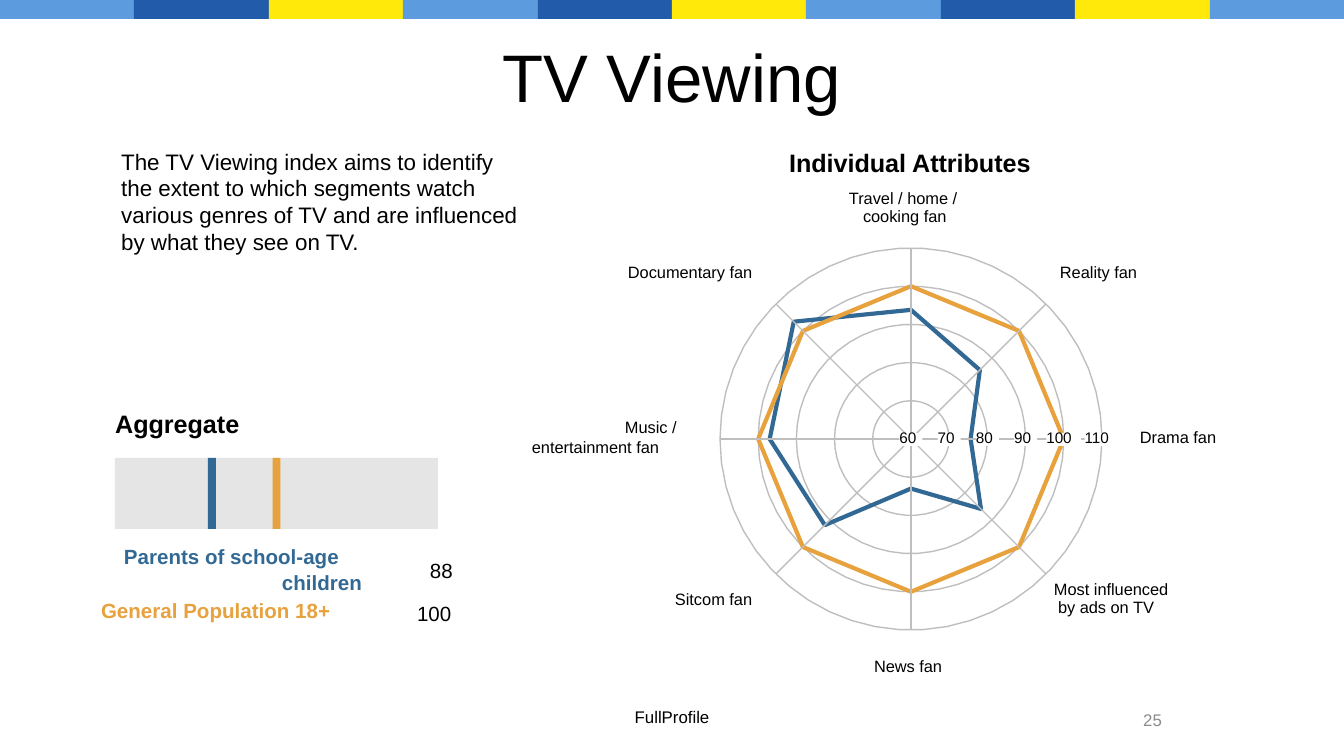
from dataclasses import dataclass
from math import cos, radians, sin

from lxml.etree import SubElement
from pptx import Presentation
from pptx.dml.color import RGBColor
from pptx.enum.shapes import MSO_CONNECTOR, MSO_SHAPE
from pptx.enum.text import MSO_ANCHOR, PP_ALIGN
from pptx.oxml.ns import qn
from pptx.util import Emu, Pt


@dataclass(frozen=True)
class Theme:
    font: str = "Arial"
    ink: str = "000000"
    paper: str = "FFFFFF"
    muted: str = "8C8C8C"
    grid: str = "BEBEBE"
    track: str = "E5E5E5"
    parents: str = "326994"
    population: str = "E7A13D"
    stripes: tuple = ("5B9BDE", "235BAB", "FFE90A")
    title: float = 36
    heading: float = 13.5
    body: float = 12
    legend: float = 11
    small: float = 9
    label: float = 8.8
    tick: float = 8.2
    grid_line: float = 0.75
    series_line: float = 2.25


THEME = Theme()
WIDTH, HEIGHT = 1344, 756
EMU_PER_PX = 914400 / 134.4

# Content: text, box (left, top, width, height), size, bold, colour, alignment, anchor
LEFT, CENTER, RIGHT = PP_ALIGN.LEFT, PP_ALIGN.CENTER, PP_ALIGN.RIGHT
TOP, MIDDLE = MSO_ANCHOR.TOP, MSO_ANCHOR.MIDDLE
PASSAGES = [
    ("TV Viewing", (67, 31, 1210, 90), THEME.title, False, THEME.ink, CENTER, MIDDLE),
    ("Aggregate", (102, 402, 208, 46), THEME.heading, True, THEME.ink, LEFT, TOP),
    ("The TV Viewing index aims to identify the extent to which segments watch "
     "various genres of TV and are influenced by what they see on TV.",
     (108, 141, 429, 210), THEME.body, False, THEME.ink, LEFT, TOP),
    ("FullProfile", (568, 700, 208, 34), THEME.small, False, THEME.ink, CENTER, TOP),
    ("Individual Attributes", (776, 141, 349, 75), THEME.heading, True, THEME.ink, LEFT, TOP),
    ("25", (1003, 700, 172, 40), THEME.small, False, THEME.muted, RIGHT, MIDDLE),
]

# Aggregate index: score and colour per segment, on a scale from low to high
AGGREGATE = [(88, THEME.parents), (100, THEME.population)]
AGGREGATE_RANGE = (70, 130)
TRACK = (115, 458, 323, 71)
MARKER_WIDTH = 8

# Legend lines: text, left, middle, width, bold, colour
LEGEND = [
    ("Parents of school-age", 124, 558, 252, True, THEME.parents),
    ("children", 282, 584, 94, True, THEME.parents),
    ("General Population 18+", 101, 612, 275, True, THEME.population),
    ("88", 430, 572, 26, False, THEME.ink),
    ("100", 417, 615, 39, False, THEME.ink),
]

# Radar: attributes run counterclockwise from Drama fan
SERIES = [
    ([75.6, 85.5, 93.8, 103.4, 97, 91.9, 73, 85.9], THEME.parents),
    ([100] * 8, THEME.population),
]
TICKS = [60, 70, 80, 90, 100, 110]
RADAR_X, RADAR_Y, RADAR_RADIUS = 911, 439, 191
RING_SIDES = 50

# Attribute label lines: text, left, middle, width
ATTRIBUTES = [
    ("Drama fan", 1140, 439, 87),
    ("Reality fan", 1060, 274, 89),
    ("Travel / home /", 849, 200, 125),
    ("cooking fan", 863, 218, 95),
    ("Documentary fan", 628, 274, 142),
    ("Music /", 625, 429, 58),
    ("entertainment fan", 532, 449, 149),
    ("Sitcom fan", 675, 601, 87),
    ("News fan", 874, 668, 75),
    ("Most influenced", 1054, 591, 130),
    ("by ads on TV", 1058, 609, 106),
]


def px(length):
    return Emu(round(length * EMU_PER_PX))


def rgb(colour):
    return RGBColor.from_string(colour)


def add_block(left, top, width, height, colour):
    block = slide.shapes.add_shape(
        MSO_SHAPE.RECTANGLE, px(left), px(top), px(width), px(height))
    block.shadow.inherit = False
    block.fill.solid()
    block.fill.fore_color.rgb = rgb(colour)
    block.line.fill.background()


def add_text(text, box, size, bold, colour, align, anchor):
    frame = slide.shapes.add_textbox(*map(px, box)).text_frame
    frame.word_wrap = True
    frame.vertical_anchor = anchor
    paragraph = frame.paragraphs[0]
    paragraph.alignment = align
    run = paragraph.add_run()
    run.text = text
    run.font.name = THEME.font
    run.font.size = Pt(size)
    run.font.bold = bold
    run.font.color.rgb = rgb(colour)
    return frame


def add_label(text, left, middle, width, size, bold=False, colour=THEME.ink):
    """One tight, unwrapped line around a vertical middle."""
    frame = add_text(text, (left, middle - 7, width, 14), size, bold, colour, LEFT, MIDDLE)
    frame.word_wrap = False
    frame.margin_left = frame.margin_right = frame.margin_top = frame.margin_bottom = 0
    frame.paragraphs[0].line_spacing = Pt(size)


def radar_point(value, degrees):
    reach = RADAR_RADIUS * (value - TICKS[0]) / (TICKS[-1] - TICKS[0])
    return (px(RADAR_X + reach * cos(radians(degrees))),
            px(RADAR_Y - reach * sin(radians(degrees))))


def add_loop(values, colour, weight):
    points = [radar_point(value, 360 * i / len(values)) for i, value in enumerate(values)]
    builder = slide.shapes.build_freeform(*points[0])
    builder.add_line_segments(points[1:], close=True)
    loop = builder.convert_to_shape()
    loop.shadow.inherit = False
    loop.fill.background()
    loop.line.color.rgb = rgb(colour)
    loop.line.width = Pt(weight)


def add_spoke(degrees):
    spoke = slide.shapes.add_connector(
        MSO_CONNECTOR.STRAIGHT, px(RADAR_X), px(RADAR_Y), *radar_point(TICKS[-1], degrees))
    spoke.line.color.rgb = rgb(THEME.grid)
    spoke.line.width = Pt(THEME.grid_line)
    SubElement(spoke._element.spPr, qn("a:effectLst"))


deck = Presentation()
deck.slide_width, deck.slide_height = px(WIDTH), px(HEIGHT)
slide = deck.slides.add_slide(deck.slide_layouts[6])

# Striped band along the top
for i in range(10):
    start, end = round(WIDTH * i / 10), round(WIDTH * (i + 1) / 10)
    add_block(start, 0, end - start, 19, THEME.stripes[i % len(THEME.stripes)])

# Title, headings, description and footer
for passage in PASSAGES:
    add_text(*passage)

# Aggregate bar with its markers and legend
add_block(*TRACK, THEME.track)
track_left, track_top, track_width, track_height = TRACK
low, high = AGGREGATE_RANGE
for score, colour in AGGREGATE:
    marker_x = track_left + track_width * (score - low) / (high - low)
    add_block(marker_x - MARKER_WIDTH / 2, track_top, MARKER_WIDTH, track_height, colour)
for text, left, middle, width, bold, colour in LEGEND:
    add_label(text, left, middle, width, THEME.legend, bold, colour)

# Radar rings, series and spokes
for tick in reversed(TICKS[1:]):
    add_loop([tick] * RING_SIDES, THEME.grid, THEME.grid_line)
for values, colour in SERIES:
    add_loop(values, colour, THEME.series_line)
for i in range(8):
    add_spoke(45 * i)

# Attribute labels and axis scale
for text, left, middle, width in ATTRIBUTES:
    add_label(text, left, middle, width, THEME.label)
tick_gap = RADAR_RADIUS / (len(TICKS) - 1)
for i, tick in enumerate(TICKS):
    tick_x = RADAR_X + i * tick_gap
    tick_width = 35 if tick >= 100 else 23
    add_block(tick_x - tick_width / 2, RADAR_Y - 6, tick_width, 13, THEME.paper)
    add_label(str(tick), tick_x - tick_width / 2, RADAR_Y, tick_width, THEME.tick)

deck.save("out.pptx")
